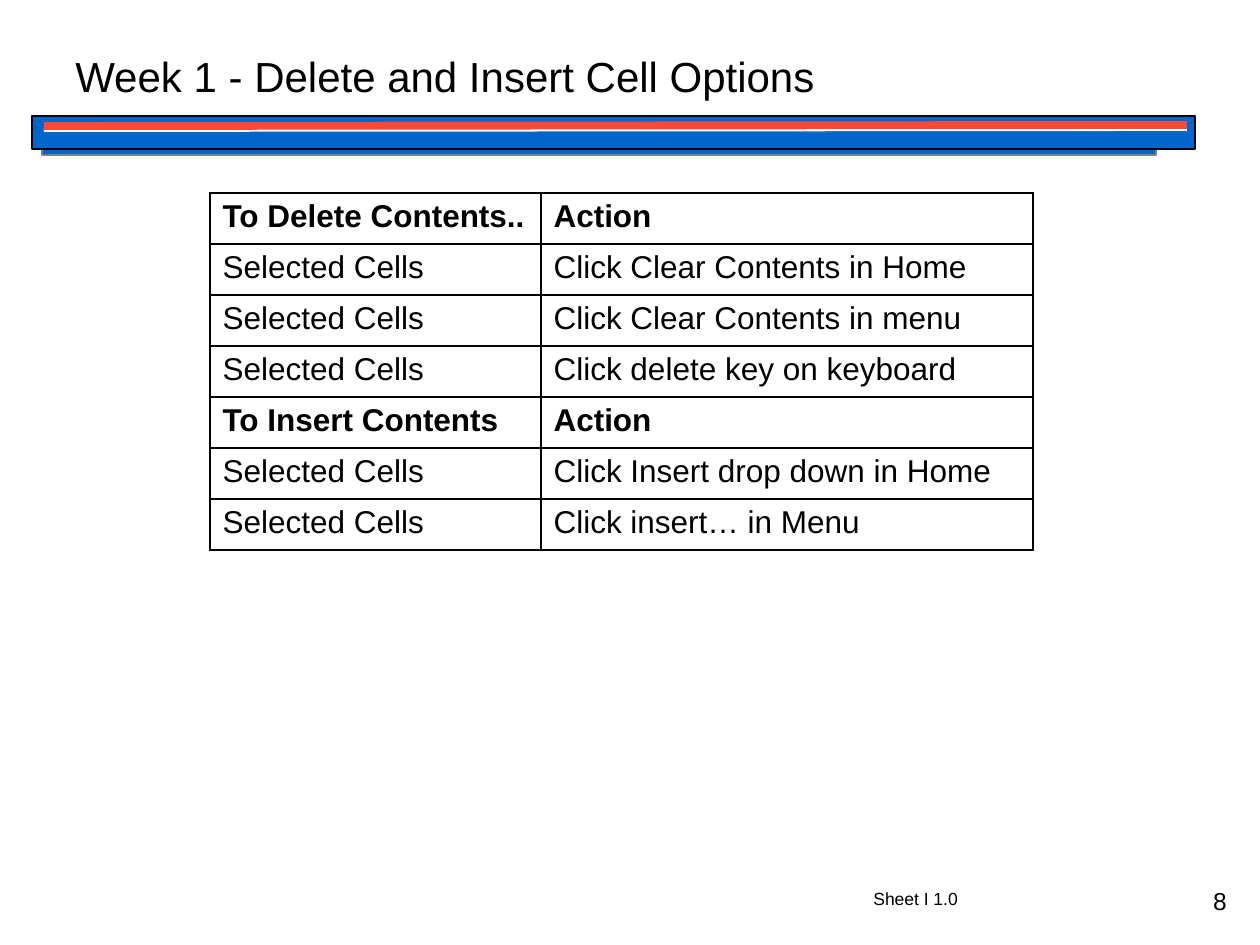
from dataclasses import dataclass

import pptx
import pptx.dml.color
import pptx.enum.shapes
import pptx.enum.text
import pptx.oxml
import pptx.oxml.ns
import pptx.util

PX = 914400 / 126
FONT = "Arial"
BLACK, BLUE, GRAY, RED, WHITE = "000000", "0066CC", "808080", "FA4936", "FFFFFF"
ALIGN = pptx.enum.text.PP_ALIGN


@dataclass(frozen=True)
class Bar:
    left: int
    top: int
    width: int
    height: int
    line: str
    weight: float


@dataclass(frozen=True)
class Stripe:
    start_y: int
    end_y: int
    color: str
    weight: float


@dataclass(frozen=True)
class Label:
    text: str
    left: int
    top: int
    width: int
    height: int
    size: int
    align: ALIGN = ALIGN.LEFT


BARS = [
    Bar(42, 123, 1114, 32, GRAY, 0.75),
    Bar(32, 116, 1163, 33, BLACK, 1.5),
]
STRIPES = [Stripe(130, 129, WHITE, 2.25), Stripe(126, 125, RED, 4.5)]
STRIPE_LEFT, STRIPE_RIGHT = 44, 1187
LABELS = [
    Label("Sheet I 1.0", 861, 882, 336, 34, 10),
    Label("8", 945, 880, 294, 65, 14, ALIGN.RIGHT),
    Label("Week 1 - Delete and Insert Cell Options", 63, 44, 1134, 156, 24),
]

TABLE_LEFT, TABLE_TOP, ROW_HEIGHT = 210, 193, 51
COLUMN_WIDTHS = [331, 492]
ROWS = [
    ("To Delete Contents..", "Action"),
    ("Selected Cells", "Click Clear Contents in Home"),
    ("Selected Cells", "Click Clear Contents in menu"),
    ("Selected Cells", "Click delete key on keyboard"),
    ("To Insert Contents", "Action"),
    ("Selected Cells", "Click Insert drop down in Home"),
    ("Selected Cells", "Click insert… in Menu"),
]


def emu(length: int) -> int:
    return round(length * PX)


def rgb(color: str) -> pptx.dml.color.RGBColor:
    return pptx.dml.color.RGBColor.from_string(color)


def write(frame, text: str, *, size: int, bold: bool = False, align=ALIGN.LEFT) -> None:
    paragraph = frame.paragraphs[0]
    paragraph.alignment = align
    run = paragraph.add_run()
    run.text = text
    run.font.name = FONT
    run.font.size = pptx.util.Pt(size)
    run.font.bold = bold
    run.font.color.rgb = rgb(BLACK)


def draw_bar(slide, bar: Bar) -> None:
    shape = slide.shapes.add_shape(
        pptx.enum.shapes.MSO_SHAPE.RECTANGLE,
        emu(bar.left), emu(bar.top), emu(bar.width), emu(bar.height))
    shape.shadow.inherit = False
    shape.fill.solid()
    shape.fill.fore_color.rgb = rgb(BLUE)
    shape.line.color.rgb = rgb(bar.line)
    shape.line.width = pptx.util.Pt(bar.weight)


def draw_stripe(slide, stripe: Stripe) -> None:
    connector = slide.shapes.add_connector(
        pptx.enum.shapes.MSO_CONNECTOR.STRAIGHT,
        emu(STRIPE_LEFT), emu(stripe.start_y), emu(STRIPE_RIGHT), emu(stripe.end_y))
    connector.line.color.rgb = rgb(stripe.color)
    connector.line.width = pptx.util.Pt(stripe.weight)
    properties = connector._element.spPr
    properties.append(pptx.oxml.parse_xml(
        f'<a:effectLst {pptx.oxml.ns.nsdecls("a")}/>'))


def draw_label(slide, label: Label) -> None:
    shape = slide.shapes.add_textbox(
        emu(label.left), emu(label.top), emu(label.width), emu(label.height))
    shape.text_frame.word_wrap = True
    write(shape.text_frame, label.text, size=label.size, align=label.align)


def outline_cell(cell) -> None:
    properties = cell._tc.get_or_add_tcPr()
    for position, side in enumerate(("lnL", "lnR", "lnT", "lnB")):
        properties.insert(position, pptx.oxml.parse_xml(
            f'<a:{side} {pptx.oxml.ns.nsdecls("a")} w="12700">'
            f'<a:solidFill><a:srgbClr val="{BLACK}"/></a:solidFill></a:{side}>'))


def draw_table(slide) -> None:
    table = slide.shapes.add_table(
        len(ROWS), len(COLUMN_WIDTHS), emu(TABLE_LEFT), emu(TABLE_TOP),
        emu(sum(COLUMN_WIDTHS)), emu(ROW_HEIGHT * len(ROWS))).table
    table.first_row = table.horz_banding = False
    for column, width in zip(table.columns, COLUMN_WIDTHS):
        column.width = emu(width)
    for row, texts in zip(table.rows, ROWS):
        row.height = emu(ROW_HEIGHT)
        for cell, text in zip(row.cells, texts):
            cell.fill.background()
            outline_cell(cell)
            write(cell.text_frame, text, size=18, bold=texts[1] == "Action")


def main() -> None:
    presentation = pptx.Presentation()
    presentation.slide_width = emu(1260)
    presentation.slide_height = emu(945)
    slide = presentation.slides.add_slide(presentation.slide_layouts[6])

    # Banner under the title
    for bar in BARS:
        draw_bar(slide, bar)
    for stripe in STRIPES:
        draw_stripe(slide, stripe)

    # Footer, slide number and title
    for label in LABELS:
        draw_label(slide, label)

    # Cell options
    draw_table(slide)
    presentation.save("out.pptx")


if __name__ == "__main__":
    main()
